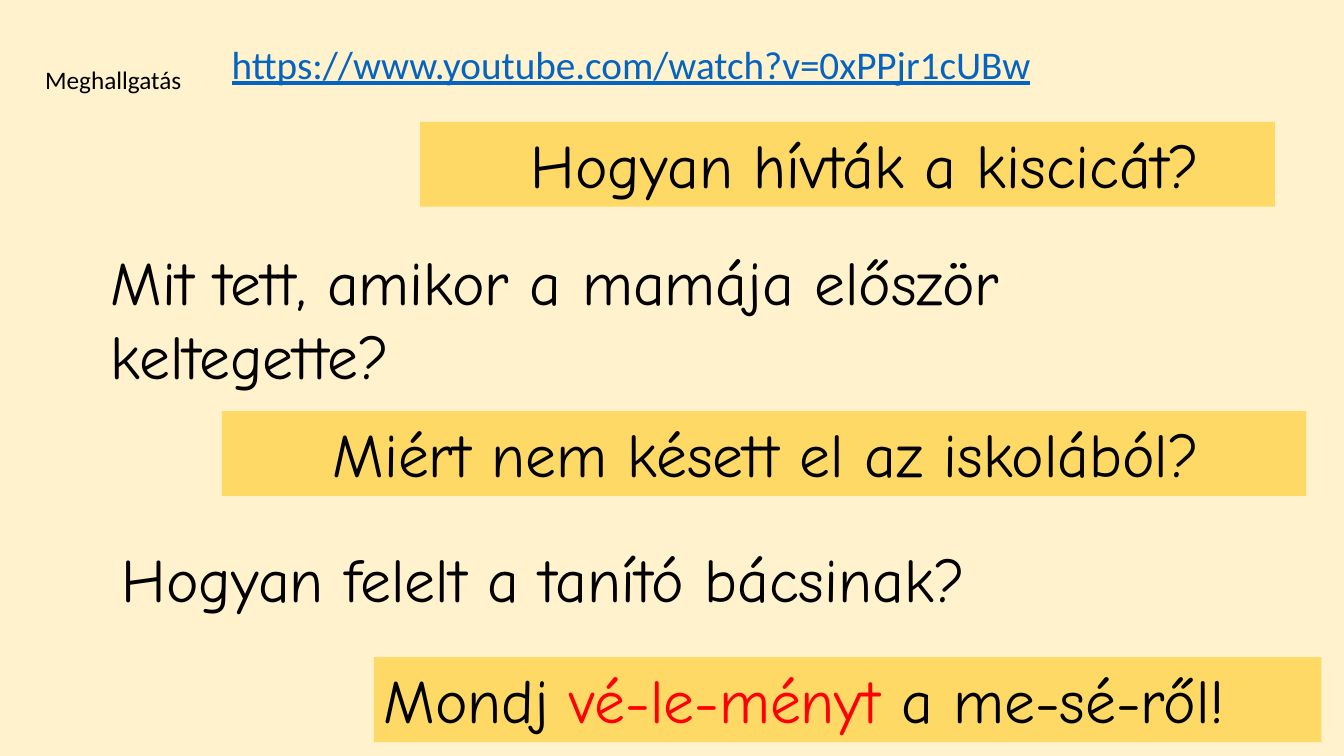
from pptx import Presentation
from pptx.dml.color import RGBColor
from pptx.enum import shapes, text
from pptx.util import Cm, Pt

CREAM = RGBColor(0xFF, 0xF2, 0xCC)
GOLD = RGBColor(0xFF, 0xD9, 0x66)
BLACK = RGBColor(0, 0, 0)
RED = RGBColor(0xFF, 0, 0)
BLUE = RGBColor(0x05, 0x63, 0xC1)

INDENT = 2.54
LINE = 2.14  # height of a one-line question

# left, top, width, height in cm
LABEL = ("Meghallgatás", (0.89, 1.5, 3.99, 1.02))
LINK = ("https://www.youtube.com/watch?v=0xPPjr1cUBw", (5.59, 0.89, 20.93, 2.24))

# runs, place, fill, indent
QUESTIONS = [
    ([("Hogyan hívták a kiscicát?", BLACK)],
     (10.59, 3.07, 21.54, LINE), GOLD, INDENT),
    ([("Mit tett, amikor a mamája először keltegette?", BLACK)],
     (0, 6.02, 30.68, 4.01), None, INDENT),
    ([("Miért nem késett el az iskolából?", BLACK)],
     (5.59, 10.36, 27.33, LINE), GOLD, INDENT),
    ([("Hogyan felelt a tanító bácsinak?", BLACK)],
     (0.28, 13.51, 30.4, LINE), None, INDENT),
    ([("Mondj ", BLACK), ("vé-le-ményt", RED), (" a me-sé-ről!", BLACK)],
     (9.42, 16.56, 23.88, LINE), GOLD, 0),
]


def write(slide, runs, place, fill=None, indent=0, font="Comic Neue",
          size=44, under=None, wrap=True):
    """Add a text box, or a filled rectangle if a fill is given."""
    place = [Cm(n) for n in place]
    if fill is None:
        box = slide.shapes.add_textbox(*place)
    else:
        box = slide.shapes.add_shape(shapes.MSO_SHAPE.RECTANGLE, *place)
        box.shadow.inherit = False
        box.fill.solid()
        box.fill.fore_color.rgb = fill
        box.line.fill.background()
    frame = box.text_frame
    frame.word_wrap = wrap
    frame.auto_size = text.MSO_AUTO_SIZE.SHAPE_TO_FIT_TEXT
    frame.vertical_anchor = text.MSO_ANCHOR.TOP
    para = frame.paragraphs[0]
    para.alignment = text.PP_ALIGN.LEFT
    if indent:
        para._p.get_or_add_pPr().set("marL", str(Cm(indent)))
    for words, color in runs:
        run = para.add_run()
        run.text = words
        run.font.name = font
        run.font.size = Pt(size)
        run.font.underline = under
        run.font.color.rgb = color


def main():
    deck = Presentation()
    deck.slide_width, deck.slide_height = Cm(33.87), Cm(19.05)
    slide = deck.slides.add_slide(deck.slide_layouts[6])
    slide.background.fill.solid()
    slide.background.fill.fore_color.rgb = CREAM

    words, place = LINK
    write(slide, [(words, BLUE)], place, font="Calibri", size=28,
          under=True, wrap=False)
    words, place = LABEL
    write(slide, [(words, BLACK)], place, font="Calibri", size=18, wrap=False)
    for runs, place, fill, indent in QUESTIONS:
        write(slide, runs, place, fill=fill, indent=indent)
    deck.save("out.pptx")


if __name__ == "__main__":
    main()
